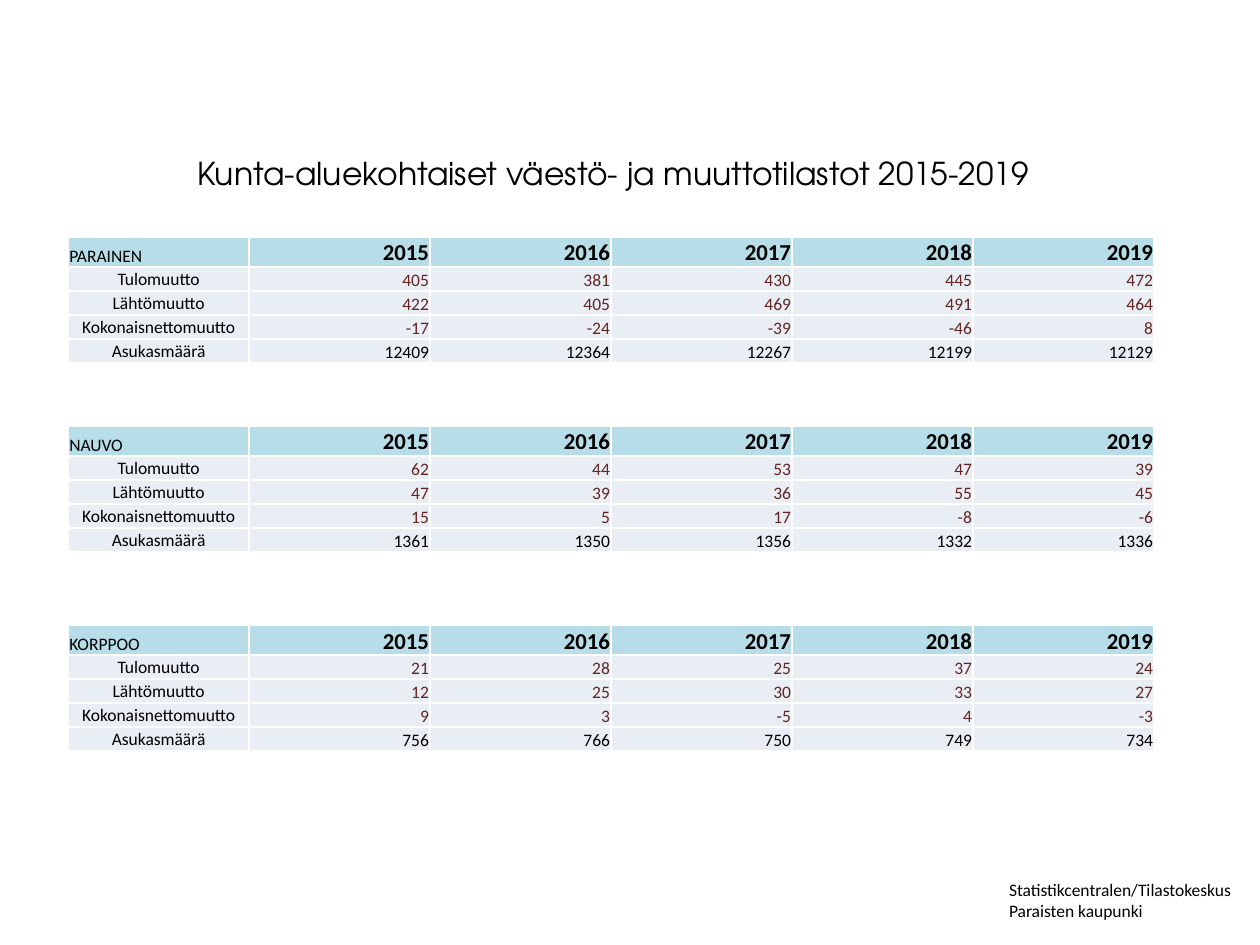
from dataclasses import dataclass

from lxml.etree import SubElement
from pptx import Presentation
from pptx.dml.color import RGBColor as RGB
from pptx.enum.text import MSO_ANCHOR as Anchor, PP_ALIGN as Align
from pptx.oxml.ns import qn
from pptx.util import Inches, Pt


@dataclass(frozen=True)
class Theme:
    """Colours, fonts and type sizes of the slide."""
    text: RGB = RGB.from_string("000000")
    migration: RGB = RGB.from_string("632523")
    header_fill: RGB = RGB.from_string("B7DEE8")
    body_fill: RGB = RGB.from_string("E9EDF4")
    border: str = "FFFFFF"
    border_width: Pt = Pt(1)
    title_font: str = "TeX Gyre Adventor"
    body_font: str = "Calibri"
    title_size: Pt = Pt(18)
    year_size: Pt = Pt(13)
    body_size: Pt = Pt(10)


THEME = Theme()
YEARS = range(2015, 2020)
TABLE_LEFT, TABLE_WIDTH = Inches(0.54), Inches(8.62)
HEADER_HEIGHT, ROW_HEIGHT = Inches(0.24), Inches(0.19)
INSET = Inches(0.01)
REGIONS = [
    ("PARAINEN", Inches(1.88), [405, 381, 430, 445, 472],
     [422, 405, 469, 491, 464], [12409, 12364, 12267, 12199, 12129]),
    ("NAUVO", Inches(3.38), [62, 44, 53, 47, 39],
     [47, 39, 36, 55, 45], [1361, 1350, 1356, 1332, 1336]),
    ("KORPPOO", Inches(4.96), [21, 28, 25, 37, 24],
     [12, 25, 30, 33, 27], [756, 766, 750, 749, 734]),
]


def style_runs(paragraph, font_name, size, color=THEME.text, bold=False):
    """Format every run of a paragraph."""
    for run in paragraph.runs:
        run.font.name = font_name
        run.font.size = size
        run.font.bold = bold
        run.font.color.rgb = color


def add_text(slide, box, text, font_name, size):
    """Place a wrapped text box in the given box."""
    text_frame = slide.shapes.add_textbox(*box).text_frame
    text_frame.word_wrap = True
    text_frame.text = text
    style_runs(text_frame.paragraphs[0], font_name, size)


def add_borders(cell):
    """Draw a thin line on all four sides of a cell."""
    properties = cell._tc.get_or_add_tcPr()
    for side in ("lnL", "lnR", "lnT", "lnB"):
        line = SubElement(properties, qn(f"a:{side}"), w=str(THEME.border_width))
        fill = SubElement(line, qn("a:solidFill"))
        SubElement(fill, qn("a:srgbClr"), val=THEME.border)


def fill_cell(cell, text, fill, align, anchor=Anchor.BOTTOM,
              size=THEME.body_size, color=THEME.text, bold=False):
    """Write and format one table cell."""
    cell.margin_left = cell.margin_right = cell.margin_top = INSET
    cell.margin_bottom = 0
    cell.vertical_anchor = anchor
    add_borders(cell)
    cell.fill.solid()
    cell.fill.fore_color.rgb = fill
    cell.text_frame.text = str(text)
    paragraph = cell.text_frame.paragraphs[0]
    paragraph.alignment = align
    style_runs(paragraph, THEME.body_font, size, color, bold)


def add_region_table(slide, box, region, arrivals, departures, population):
    """Place the migration and population table of one region."""
    net = [arrived - left for arrived, left in zip(arrivals, departures)]
    rows = [
        ("Tulomuutto", arrivals, THEME.migration),
        ("Lähtömuutto", departures, THEME.migration),
        ("Kokonaisnettomuutto", net, THEME.migration),
        ("Asukasmäärä", population, THEME.text),
    ]
    table = slide.shapes.add_table(len(rows) + 1, len(YEARS) + 1, *box).table
    table.first_row = table.horz_banding = False
    for row in table.rows:
        row.height = ROW_HEIGHT
    table.rows[0].height = HEADER_HEIGHT

    fill_cell(table.cell(0, 0), region, THEME.header_fill, Align.LEFT)
    for column, year in enumerate(YEARS, 1):
        fill_cell(table.cell(0, column), year, THEME.header_fill, Align.RIGHT,
                  size=THEME.year_size, bold=True)
    for index, (label, values, color) in enumerate(rows, 1):
        fill_cell(table.cell(index, 0), label, THEME.body_fill, Align.CENTER,
                  anchor=Anchor.MIDDLE)
        for column, value in enumerate(values, 1):
            fill_cell(table.cell(index, column), value, THEME.body_fill,
                      Align.RIGHT, color=color)


def build_slide(presentation):
    """Build the population statistics slide."""
    slide = presentation.slides.add_slide(presentation.slide_layouts[6])
    source_box = Inches(7.91), Inches(6.93), Inches(2.02), Inches(0.44)
    add_text(slide, source_box,
             "Statistikcentralen/Tilastokeskus\vParaisten kaupunki",
             THEME.body_font, THEME.body_size)
    title_box = Inches(1.47), Inches(1.17), Inches(7.58), Inches(0.71)
    add_text(slide, title_box,
             "Kunta-aluekohtaiset väestö- ja muuttotilastot 2015-2019",
             THEME.title_font, THEME.title_size)
    for region, top, *series in REGIONS:
        box = TABLE_LEFT, top, TABLE_WIDTH, Inches(1)
        add_region_table(slide, box, region, *series)


def main():
    """Create and save the presentation."""
    presentation = Presentation()
    presentation.slide_width = Inches(10)
    presentation.slide_height = Inches(7.5)
    build_slide(presentation)
    presentation.save("out.pptx")


if __name__ == "__main__":
    main()
